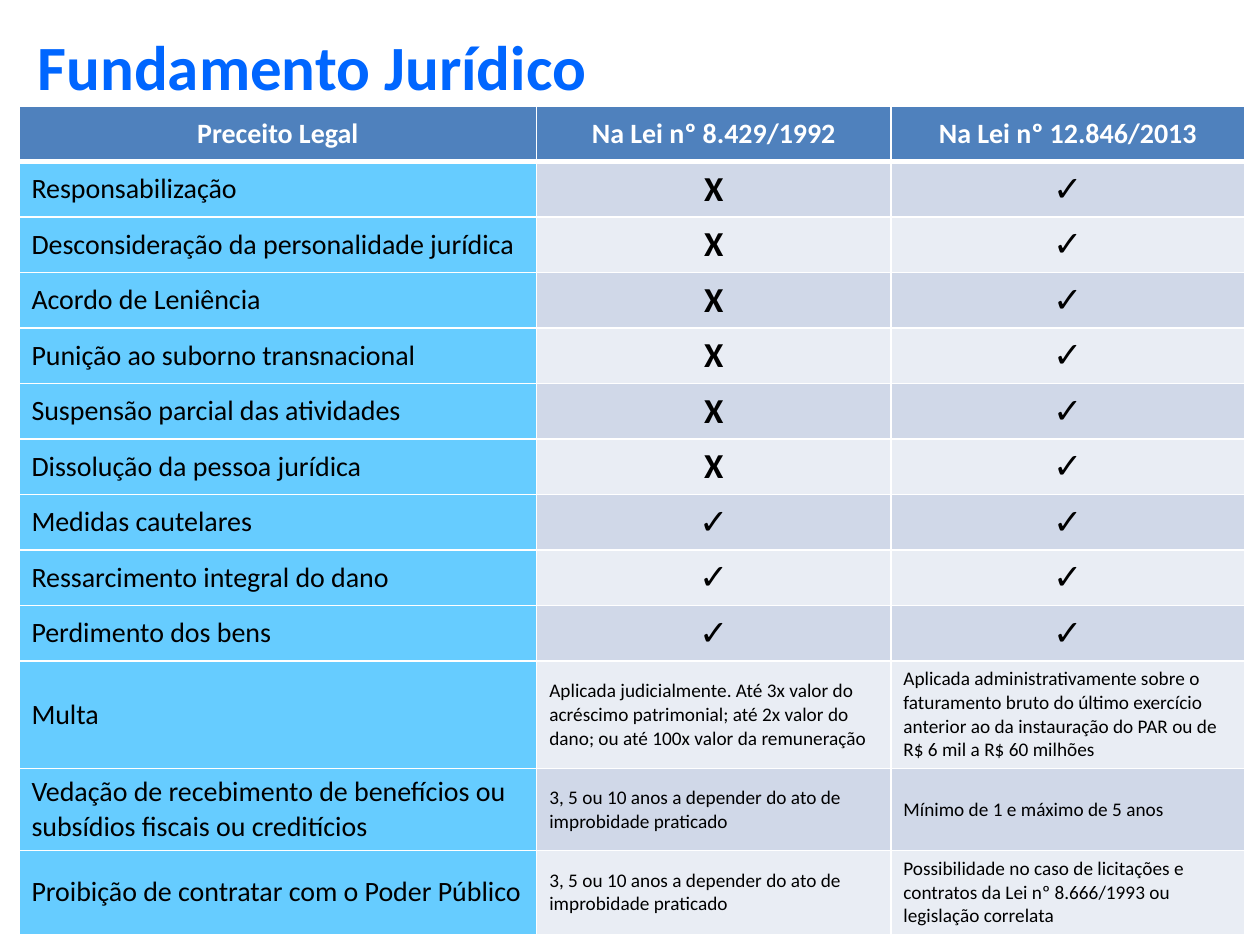
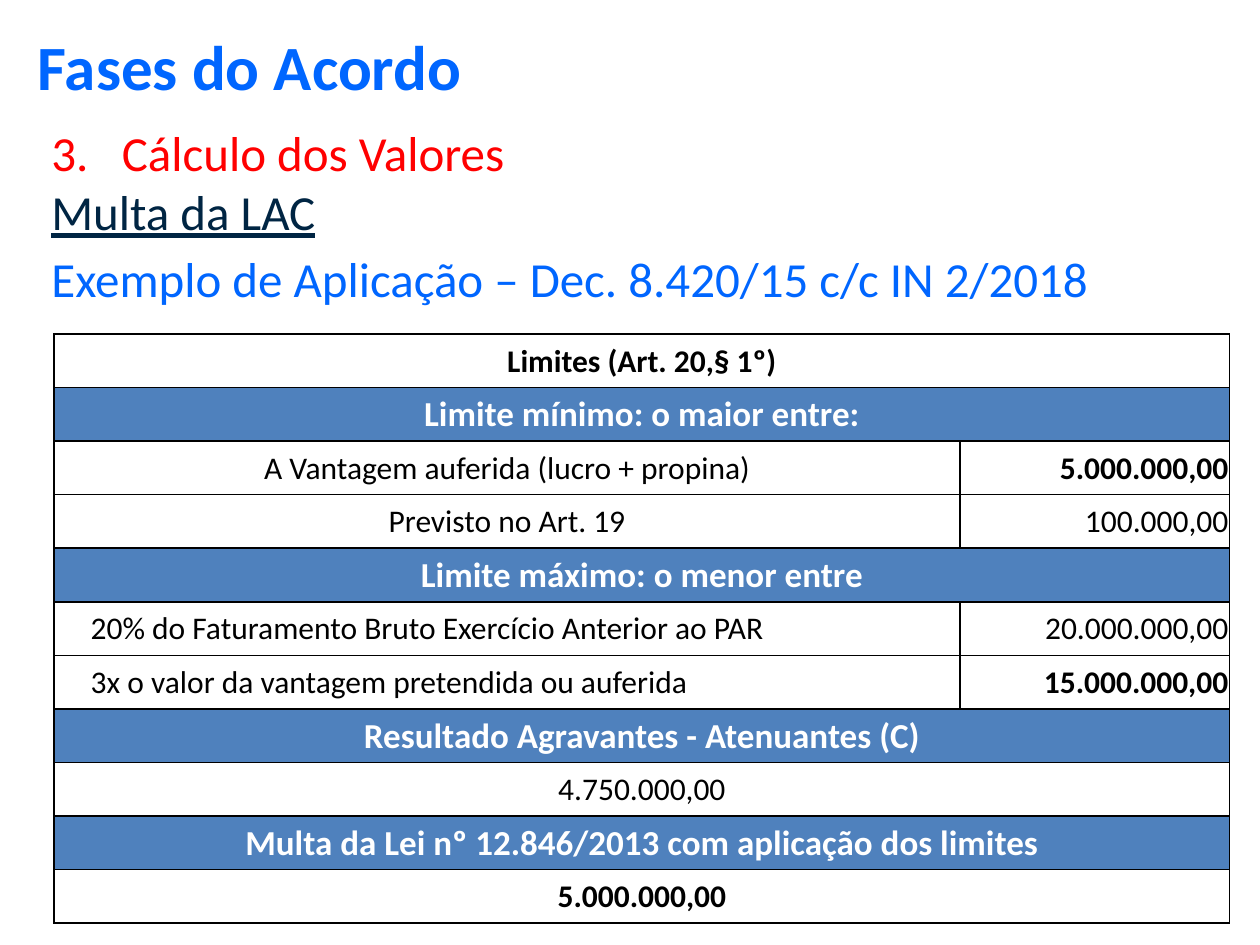
from lxml import etree
from pptx import Presentation
from pptx.dml.color import RGBColor
from pptx.enum.text import MSO_ANCHOR, MSO_AUTO_SIZE, PP_ALIGN
from pptx.oxml.ns import qn
from pptx.util import Inches, Pt

LEFT, MID, RIGHT, JUST = PP_ALIGN.LEFT, PP_ALIGN.CENTER, PP_ALIGN.RIGHT, PP_ALIGN.JUSTIFY
TOP, CENTER = MSO_ANCHOR.TOP, MSO_ANCHOR.MIDDLE
FIXED = MSO_AUTO_SIZE.NONE

WHITE = RGBColor(0xFF, 0xFF, 0xFF)
BLACK = RGBColor(0, 0, 0)
BLUE = RGBColor(0x00, 0x66, 0xFF)
HEAD = RGBColor(0x4F, 0x81, 0xBD)
SKY = RGBColor(0x66, 0xCC, 0xFF)
BANDS = (RGBColor(0xD0, 0xD8, 0xE8), RGBColor(0xE9, 0xED, 0xF4))
RED = RGBColor(0xFF, 0, 0)
NAVY = RGBColor(0x00, 0x25, 0x43)

NO, YES = "X", "✓"
BAN = "3, 5 ou 10 anos a depender do ato de improbidade praticado"
LAWS = [
    ("Preceito Legal", "Na Lei nº 8.429/1992", "Na Lei nº 12.846/2013"),
    ("Responsabilização", NO, YES),
    ("Desconsideração da personalidade jurídica", NO, YES),
    ("Acordo de Leniência", NO, YES),
    ("Punição ao suborno transnacional", NO, YES),
    ("Suspensão parcial das atividades", NO, YES),
    ("Dissolução da pessoa jurídica", NO, YES),
    ("Medidas cautelares", YES, YES),
    ("Ressarcimento integral do dano", YES, YES),
    ("Perdimento dos bens", YES, YES),
    ("Multa",
     "Aplicada judicialmente. Até 3x valor do acréscimo patrimonial; "
     "até 2x valor do dano; ou até 100x valor da remuneração",
     "Aplicada administrativamente sobre o faturamento bruto do último exercício "
     "anterior ao da instauração do PAR ou de R$ 6 mil a R$ 60 milhões"),
    ("Vedação de recebimento de benefícios ou subsídios fiscais ou creditícios",
     BAN, "Mínimo de 1 e máximo de 5 anos"),
    ("Proibição de contratar com o Poder Público", BAN,
     "Possibilidade no caso de licitações e contratos da Lei nº 8.666/1993 "
     "ou legislação correlata"),
]

BAND, SUM, BOLD, PLAIN = "band", "sum", "bold", "plain"
LIMITS = [
    (BOLD, MID, "Limites (Art. 20,§ 1º)"),
    (BAND, MID, "Limite mínimo: o maior entre:"),
    (SUM, MID, "A Vantagem auferida (lucro + propina)", "5.000.000,00", True),
    (SUM, MID, "Previsto no Art. 19", "100.000,00", False),
    (BAND, MID, "Limite máximo: o menor entre"),
    (SUM, LEFT, "20% do Faturamento Bruto Exercício Anterior ao PAR", "20.000.000,00", False),
    (SUM, LEFT, "3x o valor da vantagem pretendida ou auferida", "15.000.000,00", True),
    (BAND, MID, "Resultado Agravantes - Atenuantes (C)"),
    (PLAIN, MID, "4.750.000,00"),
    (BAND, MID, "Multa da Lei nº 12.846/2013 com aplicação dos limites"),
    (BOLD, MID, "5.000.000,00"),
]


class Deck:
    font = "Calibri"

    def __init__(self):
        self.prs = Presentation()
        self.prs.slide_width, self.prs.slide_height = Inches(10), Inches(7.5)
        self.slide = None

    def style(self, par, size, color, bold=False, align=LEFT, line=False):
        par.alignment = align
        for run in par.runs:
            font = run.font
            font.name, font.size, font.bold = self.font, Pt(size), bold
            font.underline = line
            font.color.rgb = color

    def start(self, title):
        self.slide = self.prs.slides.add_slide(self.prs.slide_layouts[5])
        shape = self.slide.shapes.title
        shape.left, shape.top = Inches(0.2), Inches(0.17)
        shape.width, shape.height = Inches(4.62), Inches(0.67)
        frame = shape.text_frame
        frame.text = title
        frame.word_wrap, frame.auto_size = True, FIXED
        frame.vertical_anchor = TOP
        self.style(frame.paragraphs[0], 36, BLUE, True)

    def text(self, left, top, width, height, lines, align=LEFT):
        box = self.slide.shapes.add_textbox(
            Inches(left), Inches(top), Inches(width), Inches(height))
        frame = box.text_frame
        frame.word_wrap = True
        frame.text = "\n".join(words for words, _, _ in lines)
        for par, (_, color, line) in zip(frame.paragraphs, lines):
            par.space_before = Pt(5)
            self.style(par, 28, color, False, align, line)
        return frame.paragraphs

    def number(self, par, first):
        props = par._p.get_or_add_pPr()
        props.set("marL", str(Inches(0.56)))
        props.set("indent", str(-Inches(0.56)))
        etree.SubElement(props, qn("a:buFont"), typeface="+mj-lt")
        etree.SubElement(props, qn("a:buAutoNum"), type="arabicPeriod", startAt=str(first))

    def table(self, left, top, cols, rows):
        frame = self.slide.shapes.add_table(
            len(rows), len(cols), Inches(left), Inches(top),
            Inches(sum(cols)), Inches(sum(rows)))
        grid = frame.table
        grid.first_row = grid.horz_banding = False
        for col, width in zip(grid.columns, cols):
            col.width = Inches(width)
        for row, height in zip(grid.rows, rows):
            row.height = Inches(height)
        return grid

    def edge(self, cell, color, top=1, bottom=1):
        props = cell._tc.get_or_add_tcPr()
        for side, width in zip("LRTB", (1, 1, top, bottom)):
            line = etree.SubElement(props, qn(f"a:ln{side}"), w=str(Pt(width)))
            fill = etree.SubElement(line, qn("a:solidFill"))
            etree.SubElement(fill, qn("a:srgbClr"), val=str(color))

    def cell(self, cell, words, size, color, bold=False, align=LEFT, fill=None):
        cell.text = words
        cell.vertical_anchor = CENTER
        self.style(cell.text_frame.paragraphs[0], size, color, bold, align)
        if fill is None:
            cell.fill.background()
        else:
            cell.fill.solid()
            cell.fill.fore_color.rgb = fill

    def inset(self, cell, left=0.01):
        cell.margin_left = Inches(left)
        cell.margin_right = cell.margin_top = Inches(0.01)
        cell.margin_bottom = 0


def laws(deck):
    deck.start("Fundamento Jurídico")
    grid = deck.table(0.15, 0.84, [4.11, 2.81, 2.81], [0.44] * 10 + [0.85, 0.65, 0.66])
    for r, row in enumerate(LAWS):
        for c, words in enumerate(row):
            cell = grid.cell(r, c)
            deck.edge(cell, WHITE, 3 if r == 1 else 1, 3 if r == 0 else 1)
            if r == 0:
                deck.cell(cell, words, 16, WHITE, True, MID, HEAD)
            elif c == 0:
                deck.cell(cell, words, 16, BLACK, fill=SKY)
            elif words in (NO, YES):
                deck.cell(cell, words, 20, BLACK, True, MID, BANDS[(r - 1) % 2])
            else:
                deck.cell(cell, words, 11, BLACK, fill=BANDS[(r - 1) % 2])


def limits(deck):
    deck.start("Fases do Acordo")
    pars = deck.text(0.31, 0.92, 9.46, 0.55, [("Cálculo dos Valores", RED, False)])
    deck.number(pars[0], 3)
    deck.text(0.31, 1.39, 8.71, 1.26, [
        ("Multa da LAC", NAVY, True),
        ("Exemplo de Aplicação – Dec. 8.420/15 c/c IN 2/2018", BLUE, False)], JUST)
    grid = deck.table(0.43, 2.65, [7.19, 2.14], [4.68 / len(LIMITS)] * len(LIMITS))
    for r, (kind, align, words, *value) in enumerate(LIMITS):
        cell, last = grid.cell(r, 0), grid.cell(r, 1)
        for each in (cell, last):
            deck.edge(each, BLACK)
            deck.inset(each)
        if kind == SUM:
            deck.inset(cell, 0.29 if align == LEFT else 0.01)
            deck.cell(last, value[0], 18, BLACK, value[1], RIGHT)
        else:
            cell.merge(last)
        if kind == BAND:
            deck.cell(cell, words, 20, WHITE, True, align, HEAD)
        else:
            deck.cell(cell, words, 18, BLACK, kind == BOLD, align)


def main():
    deck = Deck()
    laws(deck)
    limits(deck)
    deck.prs.save("out.pptx")


if __name__ == "__main__":
    main()
